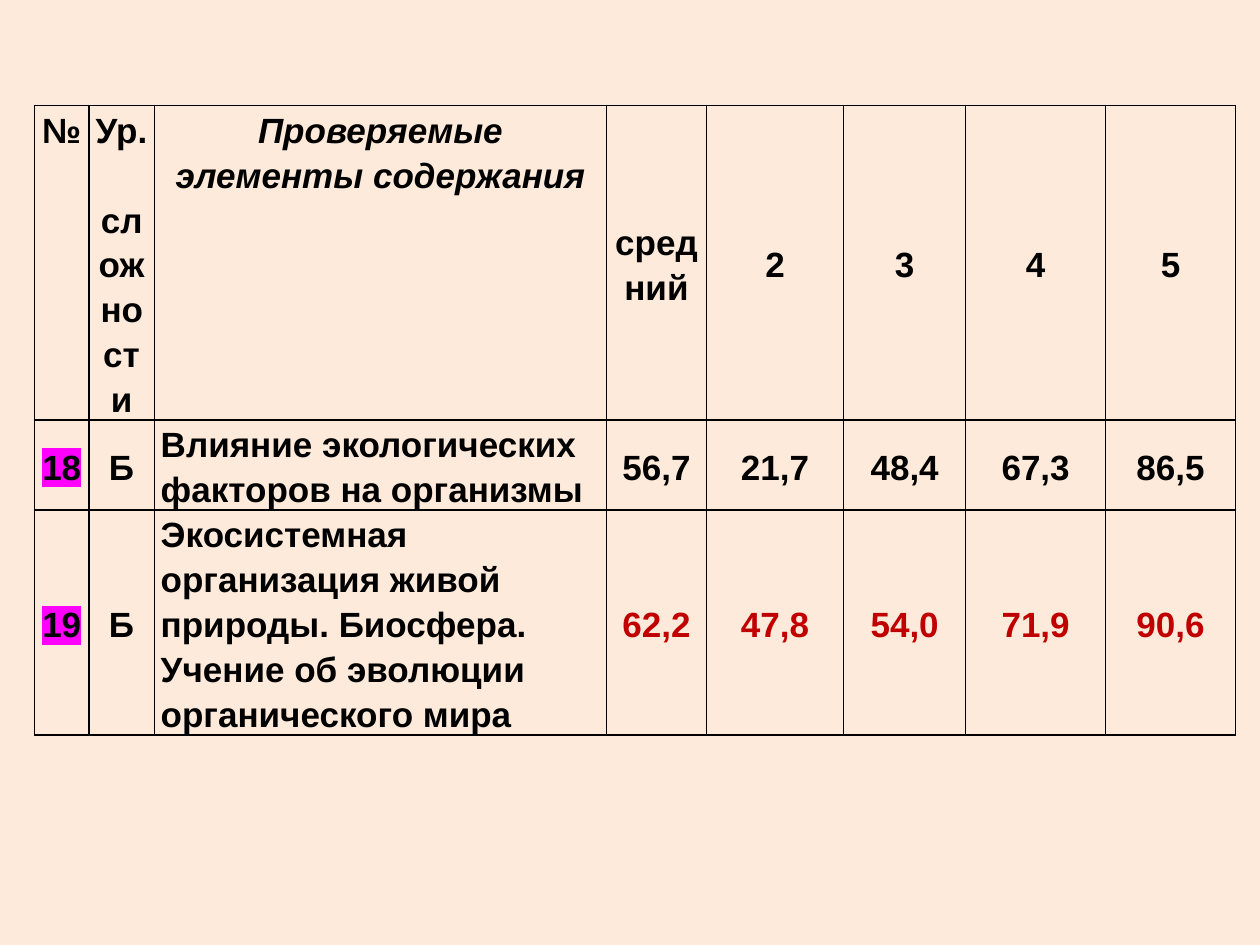
import pptx
import pptx.dml.color
import pptx.enum.text
import pptx.oxml
import pptx.oxml.ns
import pptx.util
from pptx.util import Cm

BLACK = pptx.dml.color.RGBColor(0x00, 0x00, 0x00)
RED = pptx.dml.color.RGBColor(0xC0, 0x00, 0x00)
MAGENTA = pptx.dml.color.RGBColor(0xFF, 0x00, 0xFF)
PEACH = pptx.dml.color.RGBColor(0xFD, 0xEA, 0xDA)

COL_WIDTHS = [1.09, 1.32, 9.12, 2.01, 2.77, 2.46, 2.82, 2.62]
ROW_HEIGHTS = [6.33, 1.8, 4.54]
ROWS = [
    ["№", "Ур.\nсложности", "Проверяемые элементы содержания", "средний", "2", "3", "4", "5"],
    ["18", "Б", "Влияние экологических факторов на организмы", "56,7", "21,7", "48,4", "67,3", "86,5"],
    ["19", "Б", "Экосистемная организация живой природы. Биосфера. "
     "Учение об эволюции органического мира", "62,2", "47,8", "54,0", "71,9", "90,6"],
]
TOPIC_COL = 2
SCORE_COL = 3


class SlideBuilder:
    """Holds the text style and the current slide, and draws its elements."""

    font = "Arial"
    size = pptx.util.Pt(20)
    line_spacing = 1.15
    word_gap = pptx.util.Pt(25.7)
    border = pptx.util.Pt(1)

    def __init__(self, prs):
        self.s = prs.slides.add_slide(prs.slide_layouts[6])

    def background(self, color):
        fill = self.s.background.fill
        fill.solid()
        fill.fore_color.rgb = color

    def table(self, left, top, widths, heights):
        sp = self.s.shapes.add_table(len(heights), len(widths), left, top,
                                     Cm(sum(widths)), Cm(sum(heights)))
        table = sp.table
        table.first_row = table.horz_banding = False
        for column, width in zip(table.columns, widths):
            column.width = Cm(width)
        for row, height in zip(table.rows, heights):
            row.height = Cm(height)
        return table

    def cell(self, cell, text, color=BLACK, centred=True, middle=True, italic=False, highlight=None):
        cell.margin_left = cell.margin_right = Cm(0.13)
        cell.margin_top = cell.margin_bottom = 0
        anchor = pptx.enum.text.MSO_ANCHOR
        cell.vertical_anchor = anchor.MIDDLE if middle else anchor.TOP
        cell.fill.background()
        self.borders(cell)
        tf = cell.text_frame
        tf.text = text
        align = pptx.enum.text.PP_ALIGN
        for i, p in enumerate(tf.paragraphs):
            p.alignment = align.CENTER if centred else align.LEFT
            p.line_spacing = self.line_spacing
            if i:
                p.space_before = self.word_gap
            for r in p.runs:
                r.font.name = self.font
                r.font.size = self.size
                r.font.bold = True
                r.font.italic = italic
                r.font.color.rgb = color
                if highlight is not None:
                    self.highlight(r, highlight)

    def borders(self, cell):
        tc_pr = cell._tc.get_or_add_tcPr()
        for i, side in enumerate(("lnL", "lnR", "lnT", "lnB")):
            tc_pr.insert(i, pptx.oxml.parse_xml(
                f'<a:{side} {pptx.oxml.ns.nsdecls("a")} w="{self.border}">'
                f'<a:solidFill><a:srgbClr val="{BLACK}"/></a:solidFill></a:{side}>'))

    def highlight(self, r, color):
        fill = r._r.get_or_add_rPr().find(pptx.oxml.ns.qn("a:solidFill"))
        fill.addnext(pptx.oxml.parse_xml(
            f'<a:highlight {pptx.oxml.ns.nsdecls("a")}><a:srgbClr val="{color}"/></a:highlight>'))


def main():
    prs = pptx.Presentation()
    prs.slide_width, prs.slide_height = Cm(25.4), Cm(19.05)
    builder = SlideBuilder(prs)
    builder.background(PEACH)
    table = builder.table(Cm(0.7), Cm(2.13), COL_WIDTHS, ROW_HEIGHTS)
    last = len(ROWS) - 1
    for i, row in enumerate(ROWS):
        header = i == 0
        for j, text in enumerate(row):
            builder.cell(
                table.cell(i, j), text,
                color=RED if i == last and j >= SCORE_COL else BLACK,
                centred=header or j != TOPIC_COL,
                middle=j >= SCORE_COL or (not header and j != TOPIC_COL),
                italic=header and j == TOPIC_COL,
                highlight=MAGENTA if j == 0 and not header else None)
    prs.save("out.pptx")


if __name__ == "__main__":
    main()
